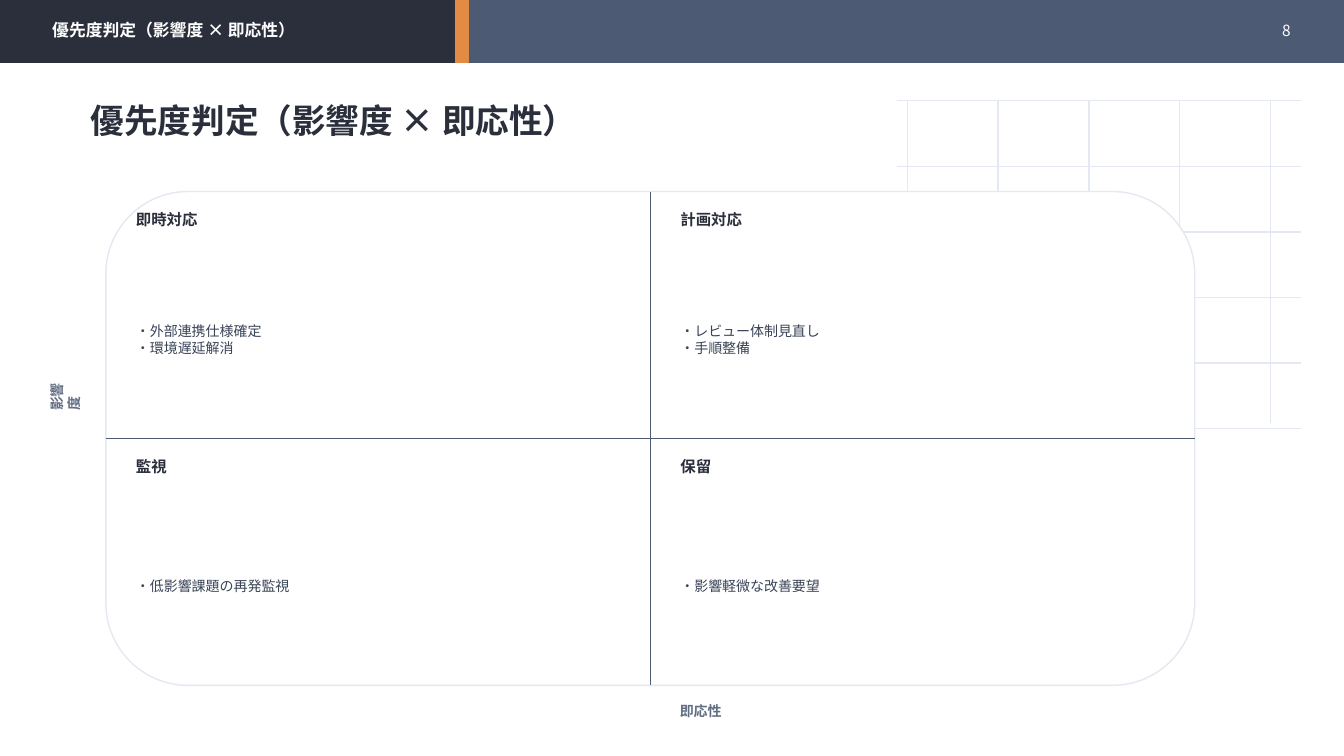
from lxml.etree import SubElement
from pptx import Presentation
from pptx.dml.color import RGBColor
from pptx.enum.shapes import MSO_CONNECTOR, MSO_SHAPE
from pptx.enum.text import MSO_ANCHOR, MSO_AUTO_SIZE, PP_ALIGN
from pptx.oxml.ns import qn
from pptx.util import Inches, Pt

# Content
TITLE = "優先度判定（影響度 × 即応性）"
PAGE_NUMBER = "8"
IMPACT_AXIS = "影響度"
READINESS_AXIS = "即応性"
QUADRANTS = [
    [("即時対応", ["・外部連携仕様確定", "・環境遅延解消"]),
     ("計画対応", ["・レビュー体制見直し", "・手順整備"])],
    [("監視", ["・低影響課題の再発監視"]),
     ("保留", ["・影響軽微な改善要望"])],
]

# Style
FONT = "Noto Sans CJK JP"
WHITE = RGBColor(0xFF, 0xFF, 0xFF)
INK = RGBColor(0x2A, 0x2F, 0x3B)
SLATE = RGBColor(0x4C, 0x5A, 0x74)
ORANGE = RGBColor(0xE2, 0x8B, 0x45)
PALE = RGBColor(0xE3, 0xE8, 0xF2)
AXIS_GREY = RGBColor(0x61, 0x6D, 0x82)
BODY = RGBColor(0x3A, 0x44, 0x57)

# Matrix geometry in inches
LEFT, TOP, WIDTH, HEIGHT = 1.05, 1.9, 10.8, 4.9

prs = Presentation()
prs.slide_width, prs.slide_height = Inches(13.33), Inches(7.5)
slide = prs.slides.add_slide(prs.slide_layouts[5])
shapes = slide.shapes


def add_line(x1, y1, x2, y2, color):
    line = shapes.add_connector(
        MSO_CONNECTOR.STRAIGHT, Inches(x1), Inches(y1), Inches(x2), Inches(y2))
    line.line.color.rgb = color
    line.line.width = Pt(1)
    SubElement(line._element.spPr, qn("a:effectLst"))
    return line


def add_block(kind, x, y, w, h, fill, outline):
    block = shapes.add_shape(kind, Inches(x), Inches(y), Inches(w), Inches(h))
    block.shadow.inherit = False
    block.fill.solid()
    block.fill.fore_color.rgb = fill
    block.line.color.rgb = outline
    block.line.width = Pt(1)
    return block


def write(frame, lines, size, color, bold=False, align=PP_ALIGN.LEFT):
    frame.word_wrap = True
    frame.auto_size = MSO_AUTO_SIZE.NONE
    frame.vertical_anchor = MSO_ANCHOR.MIDDLE
    for i, text in enumerate(lines):
        paragraph = frame.add_paragraph() if i else frame.paragraphs[0]
        paragraph.alignment = align
        run = paragraph.add_run()
        run.text = text
        run.font.size = Pt(size)
        run.font.bold = bold
        run.font.color.rgb = color
        run.font.name = FONT
        SubElement(run.font._element, qn("a:ea"), typeface=FONT)


def add_text(x, y, w, h, lines, size, color, bold=False, align=PP_ALIGN.LEFT):
    box = shapes.add_textbox(Inches(x), Inches(y), Inches(w), Inches(h))
    write(box.text_frame, lines, size, color, bold, align)
    return box


# Background grid
for row in range(6):
    y = 1 + 0.65 * row
    add_line(8.9, y, 12.9, y, PALE)
for col in range(5):
    x = 9 + 0.9 * col
    add_line(x, 1, x, 4.2, PALE)

# Header band
for x, w, color in [(0, 13.33, SLATE), (0, 4.6, INK), (4.52, 0.12, ORANGE)]:
    add_block(MSO_SHAPE.RECTANGLE, x, 0, w, 0.62, color, color)
add_text(0.42, 0.17, 8.8, 0.26, [TITLE], 12, WHITE, True)
add_text(12.15, 0.17, 0.75, 0.26, [PAGE_NUMBER], 11, WHITE, align=PP_ALIGN.RIGHT)

# Title
title = shapes.title
title.left, title.top = Inches(0.8), Inches(0.95)
title.width, title.height = Inches(11.4), Inches(0.48)
write(title.text_frame, [TITLE], 24, INK, True)

# Matrix frame and dividers
matrix = add_block(MSO_SHAPE.ROUNDED_RECTANGLE, LEFT, TOP, WIDTH, HEIGHT, WHITE, PALE)
mid_x, mid_y = LEFT + WIDTH / 2, TOP + HEIGHT / 2
vertical = add_line(mid_x, TOP, mid_x, TOP + HEIGHT, SLATE)
vertical.begin_connect(matrix, 0)
vertical.end_connect(matrix, 2)
horizontal = add_line(LEFT, mid_y, LEFT + WIDTH, mid_y, SLATE)
horizontal.begin_connect(matrix, 1)
horizontal.end_connect(matrix, 3)

# Axis labels
impact = add_text(0.35, 3.75, 0.6, 0.25, [IMPACT_AXIS], 10, AXIS_GREY, True)
impact.rotation = 270
add_text(5.8, 6.95, 2.3, 0.2, [READINESS_AXIS], 10, AXIS_GREY, True, PP_ALIGN.CENTER)

# Quadrants
for row, quadrant_row in enumerate(QUADRANTS):
    for col, (heading, items) in enumerate(quadrant_row):
        x = LEFT + 0.2 + col * WIDTH / 2
        y = TOP + 0.15 + row * HEIGHT / 2
        add_text(x, y, 5, 0.25, [heading], 11, INK, True)
        add_text(x, y + 0.34, 4.8, 1.95, items, 10, BODY)

prs.save("out.pptx")
